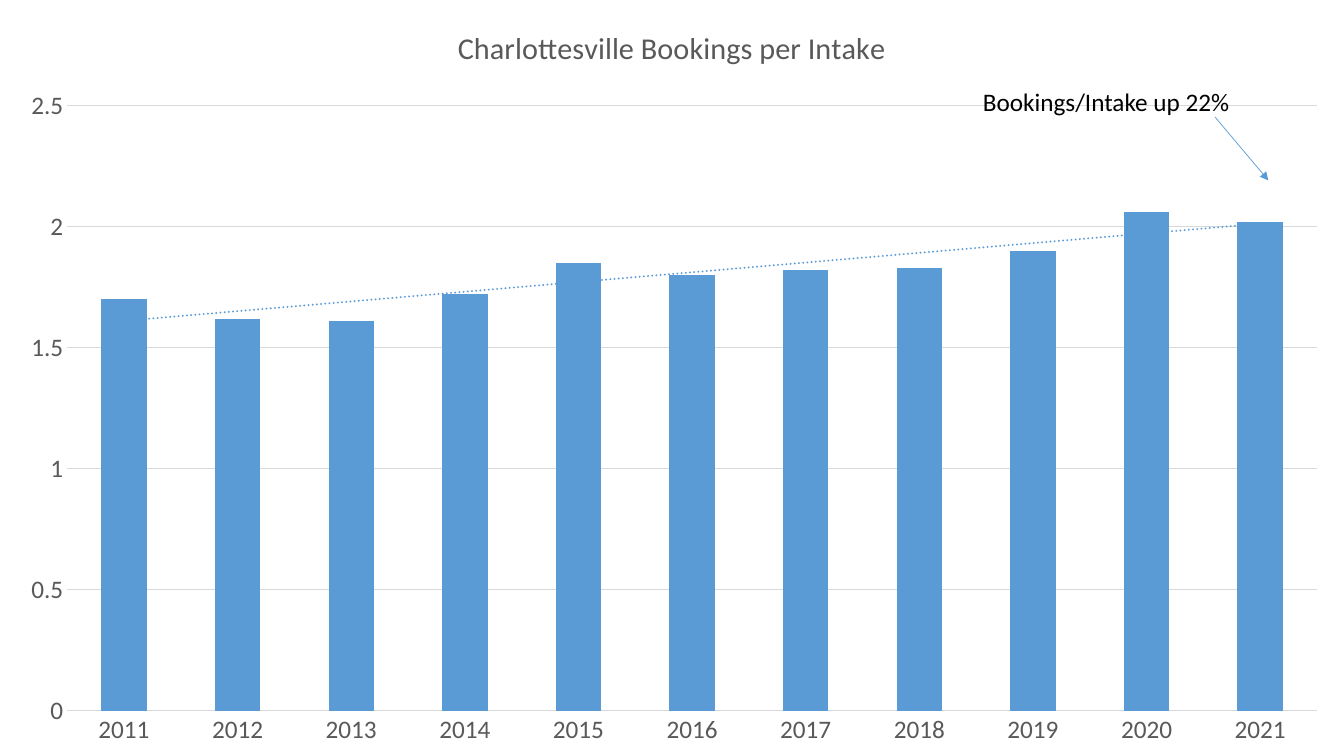
from lxml import etree
from pptx import Presentation
from pptx.chart.data import CategoryChartData
from pptx.dml.color import RGBColor
from pptx.enum.chart import XL_CHART_TYPE, XL_TICK_MARK
from pptx.enum.shapes import MSO_CONNECTOR
from pptx.enum.text import MSO_AUTO_SIZE
from pptx.oxml import parse_xml
from pptx.oxml.ns import nsdecls, qn
from pptx.util import Inches, Pt

# Content
TITLE = "Charlottesville Bookings per Intake"
NOTE = "Bookings/Intake up 22%"
BOOKINGS = {
    "2011": 1.7, "2012": 1.62, "2013": 1.61, "2014": 1.72,
    "2015": 1.85, "2016": 1.8, "2017": 1.82, "2018": 1.83,
    "2019": 1.9, "2020": 2.06, "2021": 2.02,
}

# Style
FONT = "Calibri"
BLUE = RGBColor(0x5B, 0x9B, 0xD5)
GREY = RGBColor(0x59, 0x59, 0x59)
PALE = RGBColor(0xD9, 0xD9, 0xD9)
BLACK = RGBColor(0, 0, 0)
COLUMNS = XL_CHART_TYPE.COLUMN_CLUSTERED
NO_TICK = XL_TICK_MARK.NONE
STRAIGHT = MSO_CONNECTOR.STRAIGHT

# Geometry: inches for the slide and note, shares of the chart for the plot
WIDTH, HEIGHT = 13.33, 7.5
NOTE_BOX = (9.65, 0.81, 2.67, 0.71)
ARROW = (12.05, 1.16, 12.58, 1.79)
PLOT = {"x": 0.05, "y": 0.14, "w": 0.93, "h": 0.8}


def style_font(font, size, color):
    font.name, font.size, font.bold = FONT, Pt(size), False
    font.color.rgb = color


def style_line(line, color, width):
    line.color.rgb = color
    line.width = Pt(width)


deck = Presentation()
deck.slide_width, deck.slide_height = Inches(WIDTH), Inches(HEIGHT)
page = deck.slides.add_slide(deck.slide_layouts[6])

# Column chart
data = CategoryChartData()
data.categories = list(BOOKINGS)
data.add_series(TITLE, list(BOOKINGS.values()))
chart = page.shapes.add_chart(
    COLUMNS, 0, 0, deck.slide_width, deck.slide_height, data).chart
style_font(chart.font, 18, BLACK)
chart.has_legend = False
chart.has_title = True
heading = chart.chart_title.text_frame
heading.text = TITLE
style_font(heading.paragraphs[0].runs[0].font, 21.6, GREY)
chart.chart_title.include_in_layout = False

plot = chart.plots[0]
plot.gap_width = 150
plot.vary_by_categories = False
series = plot.series[0]
series.format.fill.solid()
series.format.fill.fore_color.rgb = BLUE

# Axes
years, ratio = chart.category_axis, chart.value_axis
for axis in (years, ratio):
    axis.major_tick_mark = axis.minor_tick_mark = NO_TICK
    style_font(axis.tick_labels.font, 18, GREY)
style_line(years.format.line, PALE, 0.75)
ratio.format.line.fill.background()
ratio.minimum_scale, ratio.maximum_scale, ratio.major_unit = 0, 2.5, 0.5
ratio.tick_labels.number_format = "General"
ratio.tick_labels.number_format_is_linked = False
ratio.has_major_gridlines = True
style_line(ratio.major_gridlines.format.line, PALE, 0.75)

# Plot area placement
area = plot._element.getparent()
for layout in area.findall(qn("c:layout")):
    area.remove(layout)
shares = "".join(f'<c:{key} val="{share}"/>' for key, share in PLOT.items())
area.insert(0, parse_xml(
    f'<c:layout {nsdecls("c")}><c:manualLayout><c:layoutTarget val="inner"/>'
    f'<c:xMode val="edge"/><c:yMode val="edge"/>{shares}'
    '</c:manualLayout></c:layout>'))

# Linear trend line
series._element.find(qn("c:cat")).addprevious(parse_xml(
    f'<c:trendline {nsdecls("c", "a")}><c:spPr><a:ln w="{Pt(1.5)}" cap="rnd">'
    f'<a:solidFill><a:srgbClr val="{BLUE}"/></a:solidFill>'
    '<a:prstDash val="sysDot"/></a:ln></c:spPr>'
    '<c:trendlineType val="linear"/><c:dispRSqr val="0"/>'
    '<c:dispEq val="0"/></c:trendline>'))

# Note
box = page.shapes.add_textbox(*map(Inches, NOTE_BOX))
frame = box.text_frame
frame.text = NOTE
frame.word_wrap = False
frame.auto_size = MSO_AUTO_SIZE.SHAPE_TO_FIT_TEXT
style_font(frame.paragraphs[0].runs[0].font, 18, BLACK)

# Arrow to the last column
arrow = page.shapes.add_connector(STRAIGHT, *map(Inches, ARROW))
style_line(arrow.line, BLUE, 0.5)
etree.SubElement(arrow.line._get_or_add_ln(), qn("a:tailEnd"), type="triangle")
etree.SubElement(arrow._element.spPr, qn("a:effectLst"))

deck.save("out.pptx")
